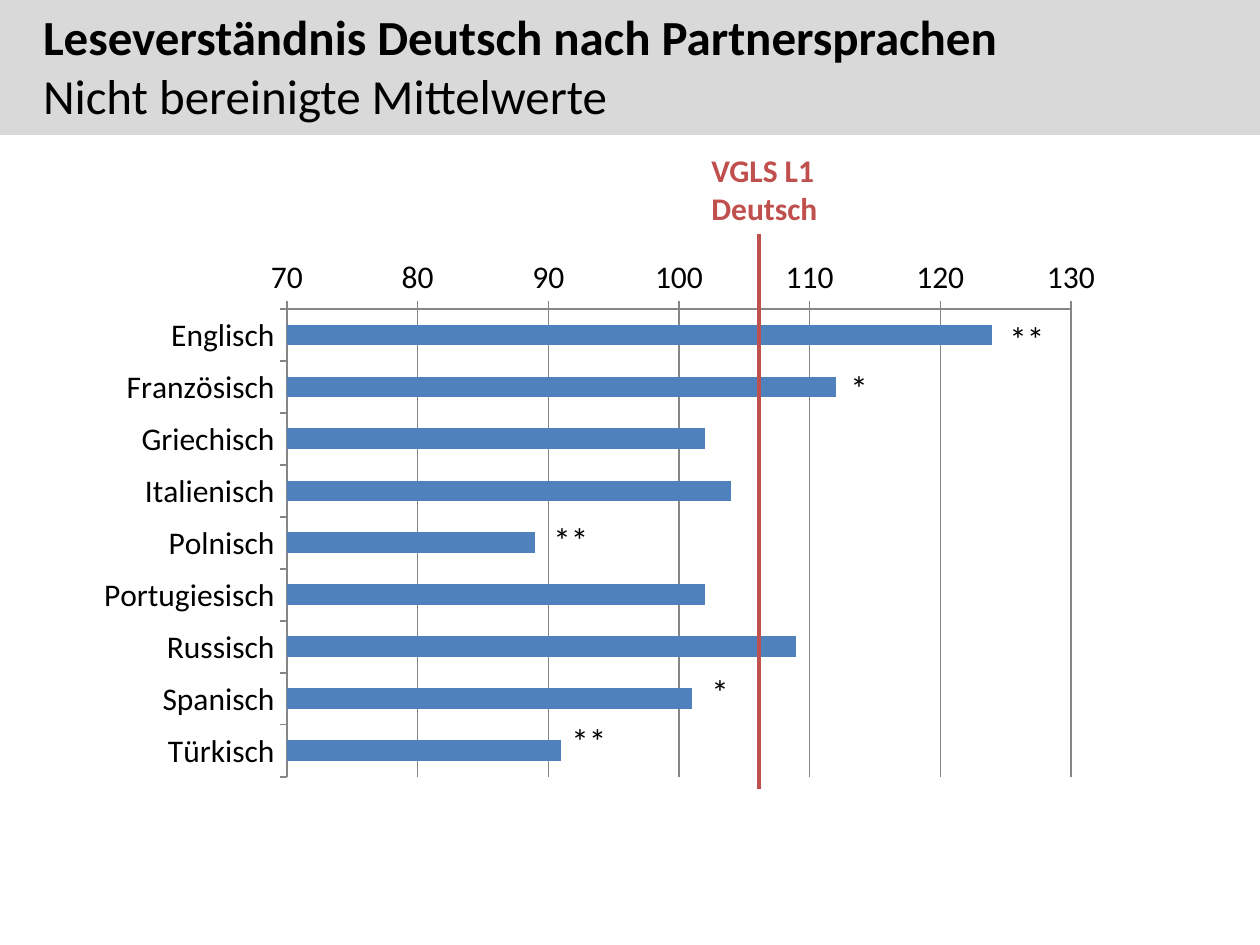
"""Build the slide on German reading comprehension by partner language."""
from typing import NamedTuple

from lxml.etree import SubElement
from pptx import Presentation
from pptx.chart.data import CategoryChartData
from pptx.dml.color import RGBColor
from pptx.enum.chart import XL_CHART_TYPE as ChartType, XL_TICK_MARK as TickMark
from pptx.enum.shapes import MSO_CONNECTOR as Connector
from pptx.enum.text import MSO_ANCHOR as Anchor, MSO_AUTO_SIZE as AutoSize, PP_ALIGN as Align
from pptx.oxml.ns import qn
from pptx.util import Emu, Pt

FONT = "Calibri"
COLORS = {"band": "D9D9D9", "text": "000000", "bar": "4F81BD",
          "reference": "C0504D", "grid": "868686"}
SCORES = {"Englisch": 124, "Französisch": 112, "Griechisch": 102,
          "Italienisch": 104, "Polnisch": 89, "Portugiesisch": 102,
          "Russisch": 109, "Spanisch": 101, "Türkisch": 91}


class Area(NamedTuple):
    left: int
    top: int
    width: int
    height: int


class Label(NamedTuple):
    text: str
    area: Area
    size: int = 20
    color: str = "text"
    bold: bool = False


TITLE = Area(0, -4, 1260, 139)
CHART = Area(84, 248, 1032, 541)
PLOT = Area(287, 309, 784, 468)
REFERENCE_X, REFERENCE_TOP, REFERENCE_BOTTOM = 759, 234, 789
STARS = [("**", 997, 311), ("*", 838, 360), ("**", 541, 512),
         ("**", 559, 713), ("*", 699, 664)]
LABELS = [Label("VGLS L1 Deutsch", Area(699, 145, 188, 89), 18, "reference", True)]
LABELS += [Label(text, Area(left, top, 69, 55)) for text, left, top in STARS]


def px(value: int) -> Emu:
    return Emu(round(value * 914400 / 126))


def rgb(name: str) -> RGBColor:
    return RGBColor.from_string(COLORS[name])


def style_font(font, size: int, color: str = "text", bold: bool = False) -> None:
    font.name, font.size, font.bold = FONT, Pt(size), bold
    font.color.rgb = rgb(color)


def add_span(para, text: str, size: int, color: str = "text", bold: bool = False) -> None:
    span = para.add_run()
    span.text = text
    style_font(span.font, size, color, bold)


def fill_title(title) -> None:
    title.left, title.top, title.width, title.height = map(px, TITLE)
    title.fill.solid()
    title.fill.fore_color.rgb = rgb("band")
    frame = title.text_frame
    frame.auto_size, frame.word_wrap = AutoSize.NONE, True
    frame.vertical_anchor, frame.margin_left = Anchor.MIDDLE, px(43)
    lines = [("Leseverständnis Deutsch nach Partnersprachen", True),
             ("Nicht bereinigte Mittelwerte", False)]
    for index, (text, bold) in enumerate(lines):
        para = frame.add_paragraph() if index else frame.paragraphs[0]
        para.alignment, para.space_before = Align.LEFT, Pt(0)
        add_span(para, text, 28, bold=bold)


def place_plot(chart) -> None:
    plot_area = chart.plots[0]._element.getparent()
    layout = plot_area.find(qn("c:layout"))
    if layout is None:
        layout = SubElement(plot_area, qn("c:layout"))
        plot_area.insert(0, layout)
    manual = SubElement(layout, qn("c:manualLayout"))
    settings = {"layoutTarget": "inner", "xMode": "edge", "yMode": "edge",
                "x": (PLOT.left - CHART.left) / CHART.width,
                "y": (PLOT.top - CHART.top) / CHART.height,
                "w": PLOT.width / CHART.width,
                "h": PLOT.height / CHART.height}
    for name, value in settings.items():
        SubElement(manual, qn(f"c:{name}")).set("val", str(value))


def add_score_chart(page) -> None:
    data = CategoryChartData()
    data.categories = list(SCORES)
    data.add_series("Series 1", list(SCORES.values()))
    chart = page.shapes.add_chart(ChartType.BAR_CLUSTERED, *map(px, CHART), data).chart
    chart.has_legend = chart.has_title = False
    style_font(chart.font, 18)
    plot = chart.plots[0]
    plot.gap_width, plot.vary_by_categories = 150, False
    bars = plot.series[0].format.fill
    bars.solid()
    bars.fore_color.rgb = rgb("bar")
    categories, values = chart.category_axis, chart.value_axis
    categories.reverse_order = True
    values.minimum_scale, values.maximum_scale, values.major_unit = 70, 130, 10
    values.has_major_gridlines = True
    for axis in (categories, values):
        axis.major_tick_mark, axis.minor_tick_mark = TickMark.OUTSIDE, TickMark.NONE
    for part in (categories, values, values.major_gridlines):
        part.format.line.color.rgb = rgb("grid")
        part.format.line.width = Pt(0.75)
    place_plot(chart)


def add_reference_line(page) -> None:
    ends = (REFERENCE_X, REFERENCE_TOP, REFERENCE_X, REFERENCE_BOTTOM)
    line = page.shapes.add_connector(Connector.STRAIGHT, *map(px, ends))
    line.line.color.rgb, line.line.width = rgb("reference"), Pt(2.25)
    SubElement(line._element.spPr, qn("a:effectLst"))


def add_label(page, label: Label) -> None:
    box = page.shapes.add_textbox(*map(px, label.area))
    frame = box.text_frame
    frame.word_wrap, frame.auto_size = True, AutoSize.SHAPE_TO_FIT_TEXT
    add_span(frame.paragraphs[0], label.text, label.size, label.color, label.bold)


def main() -> None:
    deck = Presentation()
    deck.slide_width, deck.slide_height = px(1260), px(945)
    page = deck.slides.add_slide(deck.slide_layouts[5])
    fill_title(page.shapes.title)
    add_score_chart(page)
    add_reference_line(page)
    for label in LABELS:
        add_label(page, label)
    deck.save("out.pptx")


if __name__ == "__main__":
    main()
